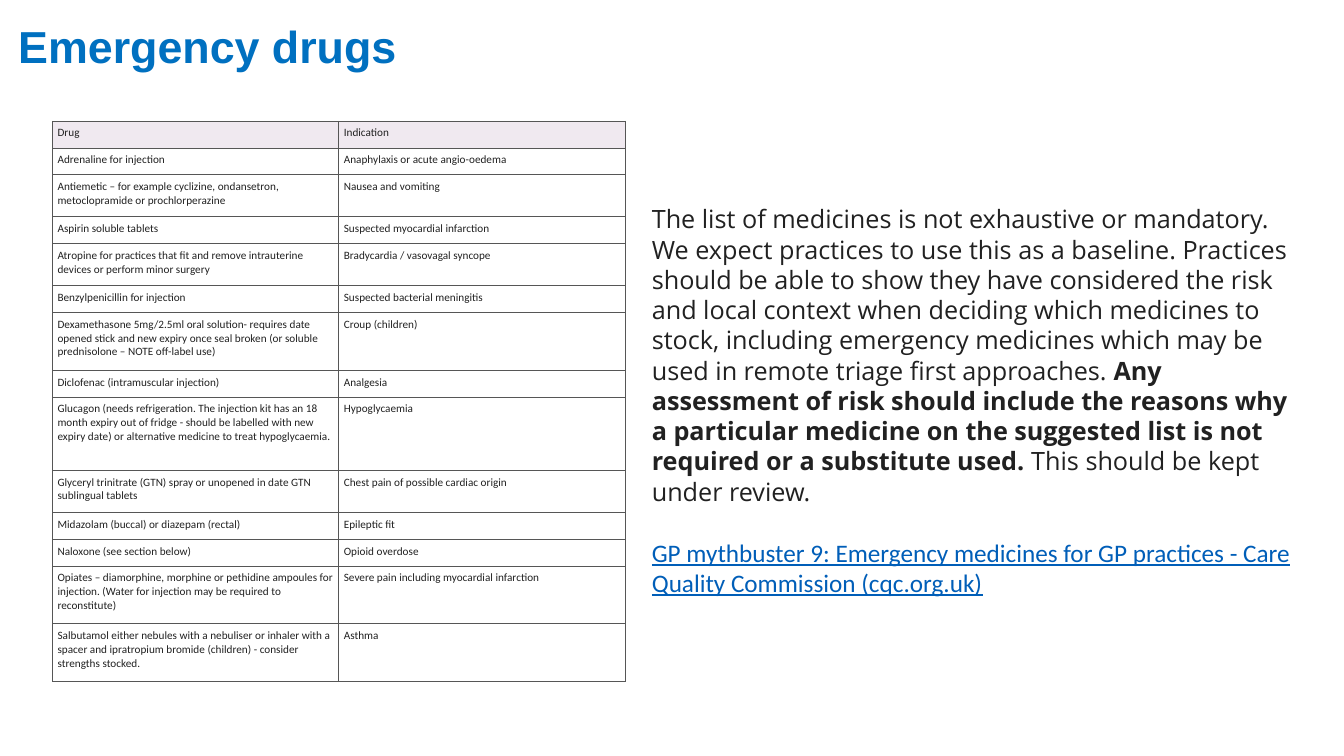
"""Build the slide on emergency drugs for GP practices."""
from dataclasses import dataclass

from lxml import etree
from pptx import Presentation
from pptx.dml.color import RGBColor
from pptx.enum.text import MSO_ANCHOR
from pptx.oxml.ns import qn
from pptx.util import Pt

TOP, BOTTOM = MSO_ANCHOR.TOP, MSO_ANCHOR.BOTTOM


@dataclass(frozen=True)
class Theme:
    heading: str = "0070C0"
    body: str = "212121"
    link: str = "005EB8"
    header_fill: str = "F0E9F0"
    border: str = "565656"
    heading_size: float = 32
    body_size: float = 18
    table_size: float = 8
    heading_font: str = "Arial"
    guidance_font: str = "Open Sans"
    table_font: str = "Calibri"


theme = Theme()


def add_run(paragraph, text, font_name, size, color, bold=False, underline=False):
    run = paragraph.add_run()
    run.text = text
    run.font.name = font_name
    run.font.size = Pt(size)
    run.font.color.rgb = RGBColor.from_string(color)
    run.font.bold = bold
    run.font.underline = underline


def add_text_frame(left, top, width, height, anchor=TOP):
    frame = slide.shapes.add_textbox(Pt(left), Pt(top), Pt(width), Pt(height)).text_frame
    frame.word_wrap = True
    frame.vertical_anchor = anchor
    return frame


presentation = Presentation()
presentation.slide_width, presentation.slide_height = Pt(960), Pt(540)
slide = presentation.slides.add_slide(presentation.slide_layouts[6])

drugs = [
    ("Drug", "Indication", 1),
    ("Adrenaline for injection", "Anaphylaxis or acute angio-oedema", 1),
    ("Antiemetic – for example cyclizine, ondansetron, metoclopramide or prochlorperazine",
     "Nausea and vomiting", 2),
    ("Aspirin soluble tablets", "Suspected myocardial infarction", 1),
    ("Atropine for practices that fit and remove intrauterine devices or perform minor surgery",
     "Bradycardia / vasovagal syncope", 2),
    ("Benzylpenicillin for injection", "Suspected bacterial meningitis", 1),
    ("Dexamethasone 5mg/2.5ml oral solution- requires date opened stick and new expiry "
     "once seal broken (or soluble prednisolone – NOTE off-label use)",
     "Croup (children)", 3),
    ("Diclofenac (intramuscular injection)", "Analgesia", 1),
    ("Glucagon (needs refrigeration. The injection kit has an 18 month expiry out of fridge "
     "- should be labelled with new expiry date) or alternative medicine to treat hypoglycaemia.",
     "Hypoglycaemia", 4),
    ("Glyceryl trinitrate (GTN) spray or unopened in date GTN sublingual tablets",
     "Chest pain of possible cardiac origin", 2),
    ("Midazolam (buccal) or diazepam (rectal)", "Epileptic fit", 1),
    ("Naloxone (see section below)", "Opioid overdose", 1),
    ("Opiates – diamorphine, morphine or pethidine ampoules for injection. "
     "(Water for injection may be required to reconstitute)",
     "Severe pain including myocardial infarction", 3),
    ("Salbutamol either nebules with a nebuliser or inhaler with a spacer and ipratropium "
     "bromide (children) - consider strengths stocked.",
     "Asthma", 3),
]

drug_table = slide.shapes.add_table(
    len(drugs), 2, Pt(37.5), Pt(86.5), Pt(409), Pt(401)).table
drug_table.first_row = False
drug_table.horz_banding = False
for column in drug_table.columns:
    column.width = Pt(204.5)

for row_index, (drug, indication, line_count) in enumerate(drugs):
    drug_table.rows[row_index].height = Pt(8 + 11.1 * line_count)
    for column_index, entry in enumerate((drug, indication)):
        cell = drug_table.cell(row_index, column_index)
        cell.margin_left = cell.margin_right = Pt(3.6)
        cell.margin_top = cell.margin_bottom = Pt(3.6)
        cell.vertical_anchor = TOP
        add_run(cell.text_frame.paragraphs[0], entry,
                theme.table_font, theme.table_size, theme.body)
        cell_properties = cell._tc.get_or_add_tcPr()
        for side in ("a:lnL", "a:lnR", "a:lnT", "a:lnB"):
            edge = etree.SubElement(cell_properties, qn(side), w=str(Pt(0.5)))
            edge_fill = etree.SubElement(edge, qn("a:solidFill"))
            etree.SubElement(edge_fill, qn("a:srgbClr"), val=theme.border)
        if row_index == 0:
            cell.fill.solid()
            cell.fill.fore_color.rgb = RGBColor.from_string(theme.header_fill)
        else:
            cell.fill.background()

heading = add_text_frame(13, 15, 618, 37.5, BOTTOM)
heading.margin_left = heading.margin_right = 0
heading.margin_top = heading.margin_bottom = 0
heading.paragraphs[0].line_spacing = 0.9
add_run(heading.paragraphs[0], "Emergency drugs",
        theme.heading_font, theme.heading_size, theme.heading, bold=True)

guidance = add_text_frame(458.5, 142, 480, 225.5)
guidance_parts = [
    ("The list of medicines is not exhaustive or mandatory. We expect practices to use this "
     "as a baseline. Practices should be able to show they have considered the risk and local "
     "context when deciding which medicines to stock, including emergency medicines which may "
     "be used in remote triage first approaches. ", False),
    ("Any assessment of risk should include the reasons why a particular medicine on the "
     "suggested list is not required or a substitute used.", True),
    (" This should be kept under review.", False),
]
for wording, is_bold in guidance_parts:
    add_run(guidance.paragraphs[0], wording,
            theme.guidance_font, theme.body_size, theme.body, bold=is_bold)

reference = add_text_frame(458.5, 380, 480, 51)
add_run(reference.paragraphs[0],
        "GP mythbuster 9: Emergency medicines for GP practices - "
        "Care Quality Commission (cqc.org.uk)",
        theme.table_font, theme.body_size, theme.link, underline=True)

presentation.save("out.pptx")
